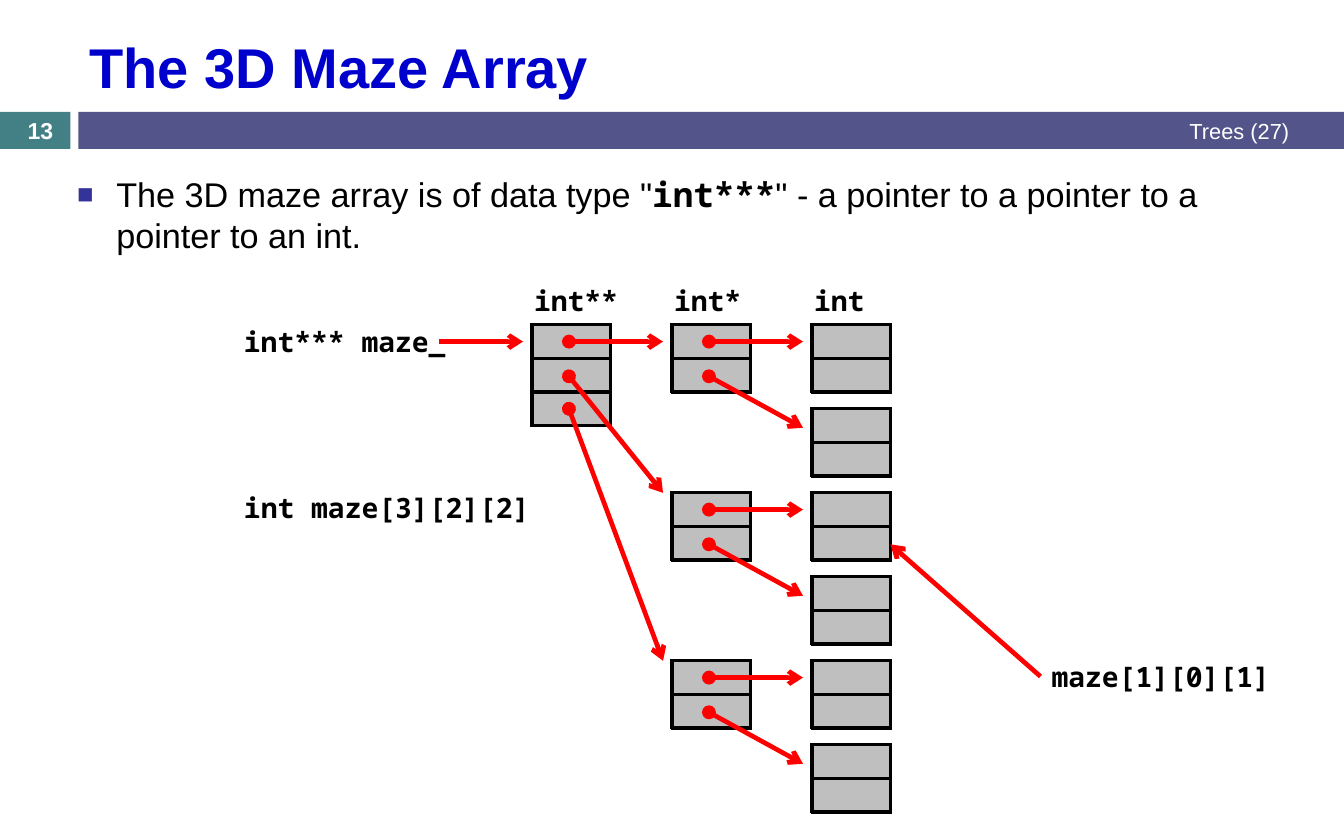
from typing import NamedTuple

from lxml import etree
from pptx import Presentation
from pptx.dml.color import RGBColor
from pptx.enum import shapes, text
from pptx.oxml import ns
from pptx.util import Inches, Pt

BLACK = RGBColor(0x00, 0x00, 0x00)
WHITE = RGBColor(0xFF, 0xFF, 0xFF)
TITLE_BLUE = RGBColor(0x00, 0x00, 0xCC)
TEAL = RGBColor(0x43, 0x80, 0x86)
INDIGO = RGBColor(0x53, 0x54, 0x8A)
GRAY = RGBColor(0xBF, 0xBF, 0xBF)
RED = RGBColor(0xFF, 0x00, 0x00)
SANS, MONO = "Arial", "Noto Sans Mono"

CELL_W, CELL_H = 0.7, 0.3
COL_X = (4.75, 6.0, 7.25)       # int**, int*, int
HEADING_W = 1.1                 # holds the longest heading on one line
TOP, PLANE_STEP, ROW_STEP = 2.9, 1.5, 0.75
DOT_DX, TIP_GAP = 0.33, 0.08    # arrow start inside a cell, gap before target
DOT_DY = (0.15, 0.46, 0.75)     # arrow start below the array's top


class Label(NamedTuple):
    words: str
    x: float
    y: float
    w: float
    h: float = 0.4
    size: float = 18
    font: str = MONO
    color: RGBColor = BLACK
    bold: bool = True
    align: text.PP_ALIGN = text.PP_ALIGN.LEFT
    anchor: text.MSO_ANCHOR = text.MSO_ANCHOR.TOP


class Array(NamedTuple):
    x: float
    y: float
    count: int


class Arrow(NamedTuple):
    x1: float
    y1: float
    x2: float
    y2: float
    dot: bool = True


def sub(parent, tag: str, **attrs: str):
    return etree.SubElement(parent, ns.qn(tag), attrs)


def add_bar(s, x: float, w: float, color: RGBColor) -> None:
    bar = s.shapes.add_shape(shapes.MSO_SHAPE.RECTANGLE, Inches(x), Inches(1),
                             Inches(w), Inches(0.33))
    bar.shadow.inherit = False
    bar.fill.solid()
    bar.fill.fore_color.rgb = color
    bar.line.fill.background()


def add_label(s, lb: Label) -> None:
    sp = s.shapes.add_textbox(Inches(lb.x), Inches(lb.y), Inches(lb.w), Inches(lb.h))
    tf = sp.text_frame
    tf.word_wrap = True
    tf.vertical_anchor = lb.anchor
    p = tf.paragraphs[0]
    p.text = lb.words
    p.alignment = lb.align
    p.font.name, p.font.size, p.font.bold = lb.font, Pt(lb.size), lb.bold
    p.font.color.rgb = lb.color


def add_bullet(s) -> None:
    sp = s.shapes.add_textbox(Inches(0.59), Inches(1.5), Inches(10.91), Inches(0.83))
    tf = sp.text_frame
    tf.word_wrap = True
    p = tf.paragraphs[0]
    p.space_before = Pt(7)
    pPr = p._p.get_or_add_pPr()
    pPr.set("marL", str(Inches(0.35)))
    pPr.set("indent", str(-Inches(0.35)))
    sub(sub(pPr, "a:buClr"), "a:srgbClr", val="333399")
    sub(pPr, "a:buSzPct", val="80000")
    sub(pPr, "a:buFont", typeface=SANS)
    sub(pPr, "a:buChar", char="■")
    p.font.size = Pt(22)
    p.font.color.rgb = BLACK
    for words, font in (('The 3D maze array is of data type "', SANS),
                        ("int***", MONO),
                        ('" - a pointer to a pointer to a pointer to an int.', SANS)):
        r = p.add_run()
        r.text = words
        r.font.name, r.font.bold = font, font == MONO


def add_array(s, a: Array) -> None:
    frame = s.shapes.add_table(a.count, 1, Inches(a.x), Inches(a.y),
                               Inches(CELL_W), Inches(CELL_H * a.count))
    table = frame.table
    table.first_row = table.horz_banding = False
    for row in table.rows:
        row.height = Inches(CELL_H)
        cell = row.cells[0]
        cell.margin_top = cell.margin_bottom = 0
        # Small empty text keeps the row at its height
        sub(cell.text_frame.paragraphs[0]._p, "a:endParaRPr", sz="1000")
        tcPr = cell._tc.get_or_add_tcPr()
        for side in ("a:lnL", "a:lnR", "a:lnT", "a:lnB"):
            ln = sub(tcPr, side, w=str(Pt(2.25)))
            sub(sub(ln, "a:solidFill"), "a:srgbClr", val=str(BLACK))
        cell.fill.solid()
        cell.fill.fore_color.rgb = GRAY


def add_arrow(s, a: Arrow) -> None:
    line = s.shapes.add_connector(shapes.MSO_CONNECTOR.STRAIGHT, Inches(a.x1),
                                  Inches(a.y1), Inches(a.x2), Inches(a.y2))
    line.line.color.rgb = RED
    line.line.width = Pt(3)
    ln = line.line._get_or_add_ln()
    if a.dot:
        sub(ln, "a:headEnd", type="oval")
    sub(ln, "a:tailEnd", type="arrow")
    sub(line._element.spPr, "a:effectLst")


def maze() -> tuple[list[Array], list[Arrow]]:
    """The arrays of a 3 x 2 x 2 maze and the pointers between them."""
    root_x, plane_x, row_x = COL_X
    arrays, arrows = [Array(root_x, TOP, 3)], []
    for i in range(3):
        plane_y = TOP + i * PLANE_STEP
        arrays.append(Array(plane_x, plane_y, 2))
        tip_y = plane_y if i else TOP + DOT_DY[0]
        arrows.append(Arrow(root_x + DOT_DX, TOP + DOT_DY[i],
                            plane_x - TIP_GAP, tip_y))
        for j in range(2):
            row_y = plane_y + j * ROW_STEP
            arrays.append(Array(row_x, row_y, 2))
            arrows.append(Arrow(plane_x + DOT_DX, plane_y + DOT_DY[j],
                                row_x - TIP_GAP, row_y + (0.17 if j else DOT_DY[0])))
    return arrays, arrows


def main() -> None:
    prs = Presentation()
    prs.slide_width, prs.slide_height = Inches(12), Inches(7.5)
    s = prs.slides.add_slide(prs.slide_layouts[6])
    middle = text.MSO_ANCHOR.MIDDLE

    # Header
    add_bar(s, 0, 0.63, TEAL)
    add_bar(s, 0.7, 11.3, INDIGO)
    add_label(s, Label("The 3D Maze Array", 0.7, 0.19, 10.91, 0.8, 36, SANS,
                       TITLE_BLUE, anchor=middle))
    add_label(s, Label("Trees (27)", 4.5, 0.99, 7.11, 0.35, 14, SANS, WHITE, False,
                       text.PP_ALIGN.RIGHT, middle))
    add_label(s, Label("13", 0, 1.01, 0.72, 0.3, 14.8, SANS, WHITE, True,
                       text.PP_ALIGN.CENTER, middle))
    add_bullet(s)

    # Arrays and pointers
    arrays, arrows = maze()
    arrows += [Arrow(3.92, 3.05, 4.67, 3.05, dot=False),
               Arrow(9.29, 6.04, 7.95, 4.86, dot=False)]
    for array in arrays:
        add_array(s, array)
    for arrow in arrows:
        add_arrow(s, arrow)

    # Column headings and declarations
    for words, x in zip(("int**", "int*", "int"), COL_X):
        add_label(s, Label(words, x - TIP_GAP, 2.48, HEADING_W))
    for label in (Label("int*** maze_", 2.08, 2.85, 2.1),
                  Label("int maze[3][2][2]", 2.08, 4.33, 2.75),
                  Label("maze[1][0][1]", 9.29, 5.84, 2.21)):
        add_label(s, label)

    prs.save("out.pptx")


if __name__ == "__main__":
    main()
